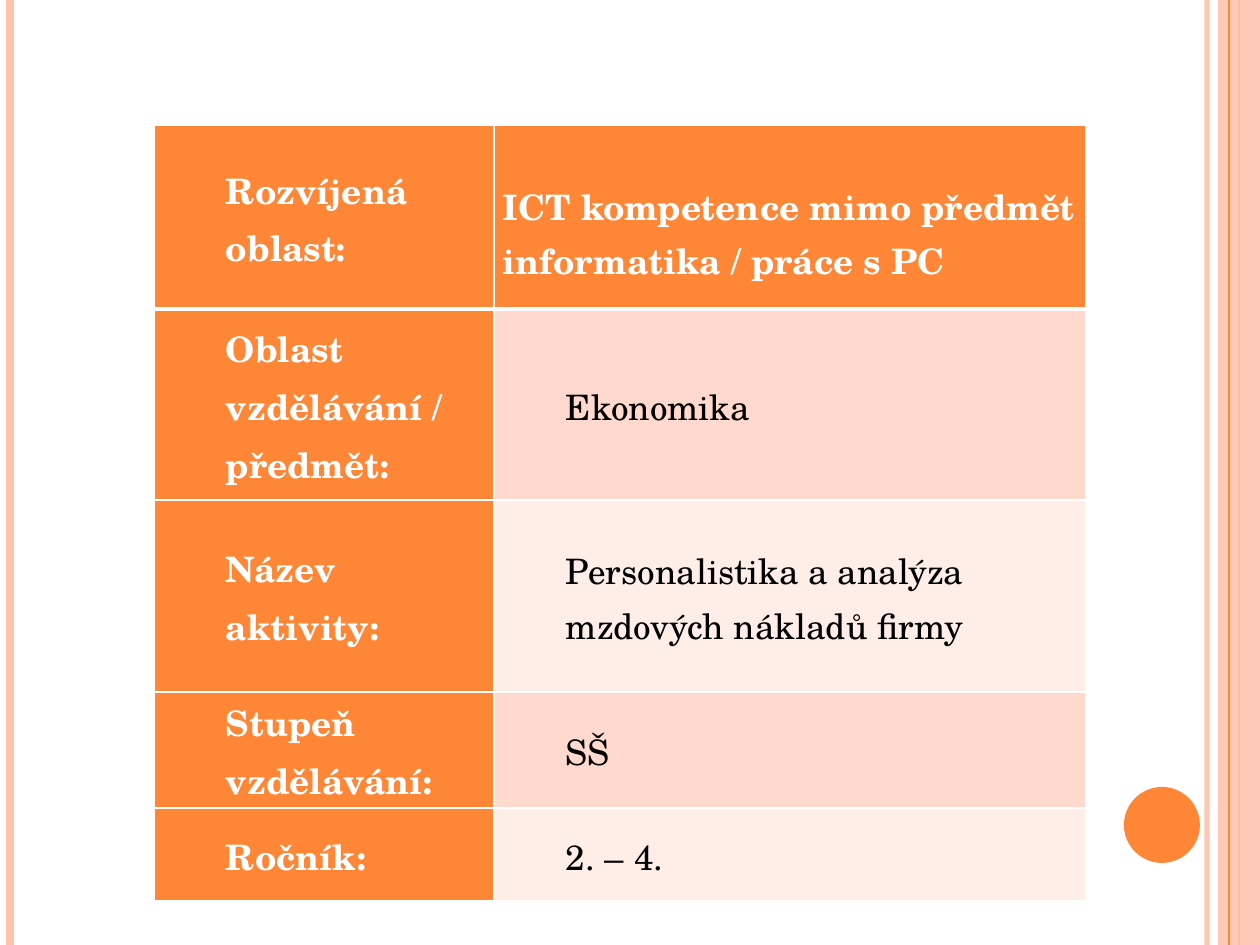
from dataclasses import dataclass
from typing import Optional

from lxml.etree import SubElement as Sub
from pptx import Presentation
from pptx.dml.color import RGBColor as RGB
from pptx.enum.shapes import MSO_CONNECTOR as Conn, MSO_SHAPE as Shape
from pptx.enum.text import MSO_ANCHOR as Anchor
from pptx.oxml.ns import qn
from pptx.util import Emu, Pt

WIDE, HIGH = 1260, 945


def px(n: int) -> Emu:
    return Emu(round(n * 914400 / 126))


@dataclass(frozen=True)
class Theme:
    font: str = "TeX Gyre Schola"
    size: int = 20
    main: str = "FE8637"
    soft: str = "FEC3AE"
    bands: tuple = ("FFD9CE", "FFEDE8")
    white: str = "FFFFFF"
    black: str = "000000"


@dataclass(frozen=True)
class Rule:
    x: int
    color: str
    width: float
    alpha: int = 100


@dataclass(frozen=True)
class Entry:
    label: str
    value: str
    high: int


THEME = Theme()
BACK = [Rule(1207, THEME.soft, 3, 93), Rule(10, THEME.soft, 4.5),
        Rule(1239, THEME.main, 1.5)]
FRONT = Rule(1229, THEME.main, 0.75)
ROWS = [
    Entry("Rozvíjená oblast:",
          "ICT kompetence mimo předmět informatika / práce s PC", 184),
    Entry("Oblast vzdělávání / předmět:", "Ekonomika", 191),
    Entry("Název aktivity:", "Personalistika a analýza mzdových nákladů firmy", 192),
    Entry("Stupeň vzdělávání:", "SŠ", 93),
    Entry("Ročník:", "2. – 4.", 93),
]
COLS = (340, 592)


def fade(fill, alpha: int) -> None:
    if alpha < 100:
        Sub(fill.find(".//" + qn("a:srgbClr")), qn("a:alpha"), val=str(alpha * 1000))


def draw_rule(slide, rule: Rule) -> None:
    line = slide.shapes.add_connector(Conn.STRAIGHT, px(rule.x), 0, px(rule.x), px(HIGH))
    line.line.color.rgb = RGB.from_string(rule.color)
    line.line.width = Pt(rule.width)
    props = line._element.spPr
    fade(props, rule.alpha)
    Sub(props, qn("a:effectLst"))


def draw_shape(slide, kind: Shape, box: tuple, color: str, alpha: int = 100) -> None:
    shape = slide.shapes.add_shape(kind, *map(px, box))
    shape.shadow.inherit = False
    shape.fill.solid()
    shape.fill.fore_color.rgb = RGB.from_string(color)
    shape.line.fill.background()
    fade(shape._element.spPr, alpha)


def set_edges(cell, head: bool, under: bool) -> None:
    props = cell._tc.get_or_add_tcPr()
    for side in "LRTB":
        thick = (head and side == "B") or (under and side == "T")
        edge = Sub(props, qn(f"a:ln{side}"), w=str(Pt(3 if thick else 1)))
        Sub(Sub(edge, qn("a:solidFill")), qn("a:srgbClr"), val=THEME.white)


def fill_cell(cell, text: str, fill: str, color: str, bold: bool,
              indent: Optional[int]) -> None:
    # Cells without an indent start one line below the top
    form = dict(margin_left=px(9), margin_right=px(9), margin_bottom=0,
                margin_top=0 if indent else px(54),
                vertical_anchor=Anchor.MIDDLE if indent else Anchor.TOP, text=text)
    for key, val in form.items():
        setattr(cell, key, val)
    cell.fill.solid()
    cell.fill.fore_color.rgb = RGB.from_string(fill)
    para = cell.text_frame.paragraphs[0]
    if indent:
        para._p.get_or_add_pPr().set("marL", str(px(indent)))
        para.line_spacing = 1.07
    font = para.runs[0].font
    for key, val in dict(name=THEME.font, size=Pt(THEME.size), bold=bold).items():
        setattr(font, key, val)
    font.color.rgb = RGB.from_string(color)


def draw_table(slide) -> None:
    high = sum(row.high for row in ROWS)
    table = slide.shapes.add_table(len(ROWS), len(COLS), px(154), px(125),
                                   px(sum(COLS)), px(high)).table
    for col, wide in zip(table.columns, COLS):
        col.width = px(wide)
    for i, row in enumerate(ROWS):
        table.rows[i].height = px(row.high)
        head = i == 0
        left, right = table.cell(i, 0), table.cell(i, 1)
        for cell in (left, right):
            set_edges(cell, head, i == 1)
        fill_cell(left, row.label, THEME.main, THEME.white, True, 63)
        if head:
            fill_cell(right, row.value, THEME.main, THEME.white, True, None)
        else:
            band = THEME.bands[(i - 1) % 2]
            fill_cell(right, row.value, band, THEME.black, False, 63)


def main() -> None:
    deck = Presentation()
    deck.slide_width, deck.slide_height = px(WIDE), px(HIGH)
    slide = deck.slides.add_slide(deck.slide_layouts[6])

    # Side stripes and dot
    for rule in BACK:
        draw_rule(slide, rule)
    draw_shape(slide, Shape.RECTANGLE, (1218, 0, 42, HIGH), THEME.soft, 87)
    draw_rule(slide, FRONT)
    draw_shape(slide, Shape.OVAL, (1124, 787, 76, 76), THEME.main)

    # Activity details
    draw_table(slide)
    deck.save("out.pptx")


if __name__ == "__main__":
    main()
